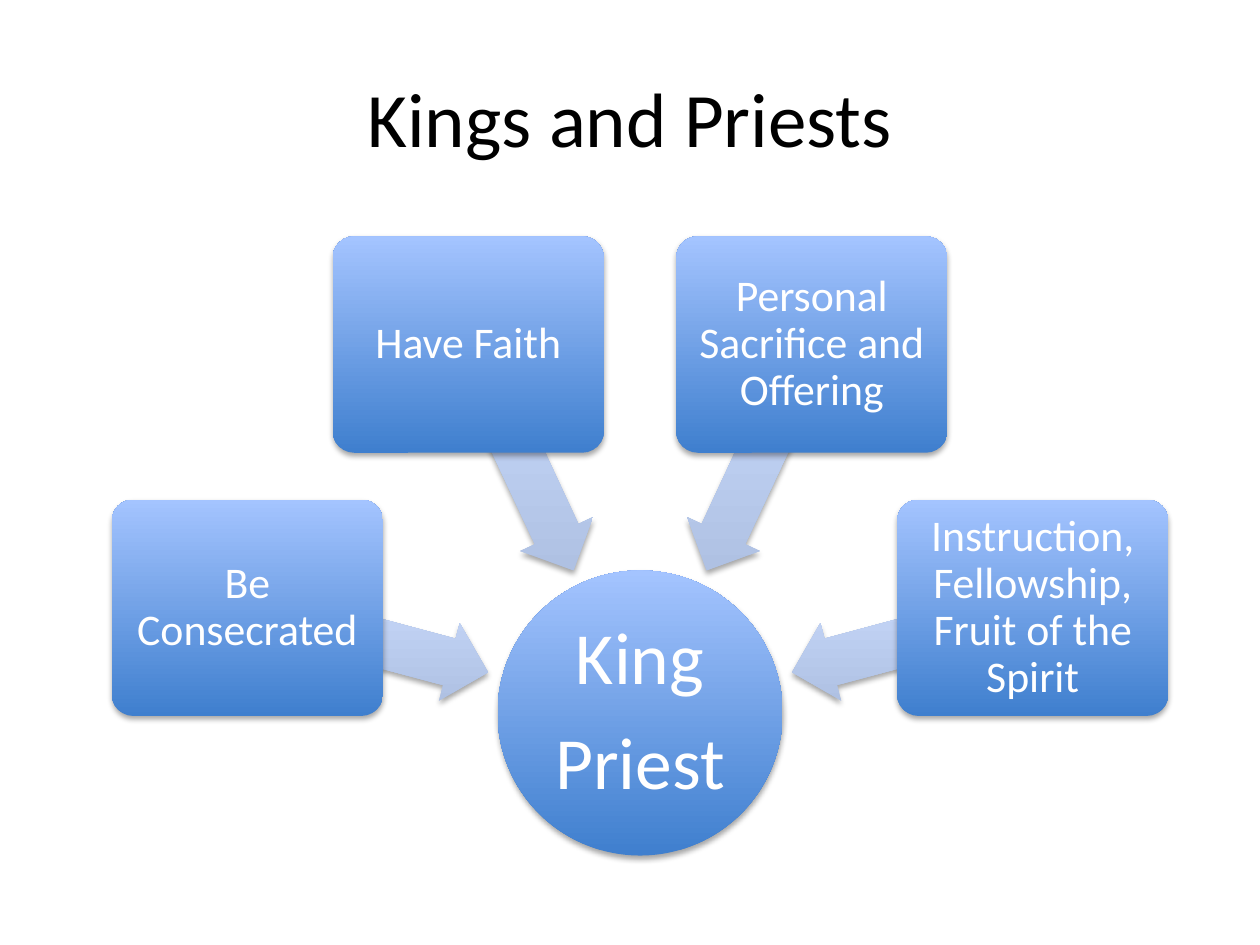
from math import cos, radians, sin

from pptx import Presentation, util as u
from pptx.dml.color import RGBColor
from pptx.enum import shapes, text
from pptx.oxml import parse_xml
from pptx.oxml.ns import nsdecls, qn

BLACK = RGBColor(0x00, 0x00, 0x00)
WHITE = RGBColor(0xFF, 0xFF, 0xFF)
DEEP_BLUE = RGBColor(0x3F, 0x7F, 0xCE)
SKY_BLUE = RGBColor(0xA4, 0xC4, 0xFF)
DEEP_MIST = RGBColor(0xAD, 0xBF, 0xE1)
PALE_MIST = RGBColor(0xCC, 0xDD, 0xFF)
FONT = "Calibri"
SHADOW = (
    f'<a:effectLst {nsdecls("a")}><a:outerShdw blurRad="40000" dist="23000" '
    'dir="5400000" rotWithShape="0"><a:srgbClr val="000000">'
    '<a:alpha val="35000"/></a:srgbClr></a:outerShdw></a:effectLst>'
)
STEPS = [
    "Be Consecrated",
    "Have Faith",
    "Personal Sacrifice and Offering",
    "Instruction, Fellowship, Fruit of the Spirit",
]
FIRST_ANGLE, ANGLE_STEP = 15, 50


def apply(target, values):
    """Set each attribute of the target from a dict of values."""
    for name, value in values.items():
        setattr(target, name, value)


def write(frame, lines, size, color, inset, paragraph_format):
    """Write centred lines into a text frame."""
    sides = ("margin_left", "margin_right", "margin_top", "margin_bottom")
    apply(frame, {side: u.Inches(inset) for side in sides})
    apply(frame, {"word_wrap": True, "vertical_anchor": text.MSO_ANCHOR.MIDDLE})
    frame.text = "\n".join(lines)
    for para in frame.paragraphs:
        apply(para, {"alignment": text.PP_ALIGN.CENTER, **paragraph_format})
        for span in para.runs:
            apply(span.font, {"name": FONT, "size": u.Pt(size)})
            span.font.color.rgb = color


def add_solid(page, kind, center, size, colors):
    """Add a shaded, shadowed shape around a centre given in inches."""
    (x, y), (width, height) = center, size
    edges = (x - width / 2, y - height / 2, width, height)
    solid = page.shapes.add_shape(kind, *map(u.Inches, edges))
    solid.fill.gradient()
    solid.fill.gradient_angle = 90
    for stop, color in zip(solid.fill.gradient_stops, colors):
        stop.color.rgb = color
    solid.line.fill.background()
    properties = solid._element.spPr
    properties.find(qn("a:gradFill")).set("rotWithShape", "0")
    properties.append(parse_xml(SHADOW))
    return solid


def add_title(page, box, words):
    """Place and format the title placeholder in the box."""
    title = page.shapes.title
    apply(title, dict(zip(("left", "top", "width", "height"), map(u.Inches, box))))
    write(title.text_frame, [words], 44, BLACK, 0.1, {})


def add_radial_diagram(page, box, hub_lines, steps):
    """Fan the steps around a hub at the foot of the box, with arrows inward."""
    left, top, width, height = box
    hub_size = 0.27 * width
    hub_x, hub_y = left + width / 2, top + height - hub_size / 2
    card_size = (0.257 * width, 0.205 * width)
    arrow_size = (0.236 * width, 0.076 * width)
    blues, mists = (DEEP_BLUE, SKY_BLUE), (DEEP_MIST, PALE_MIST)

    def around(reach, angle):
        """Return the point at a share of the width from the hub."""
        turn = radians(angle)
        return hub_x - reach * width * cos(turn), hub_y - reach * width * sin(turn)

    hub = add_solid(page, shapes.MSO_SHAPE.OVAL, (hub_x, hub_y), (hub_size, hub_size), blues)
    write(hub.text_frame, hub_lines, 42, WHITE, 0.03,
          {"line_spacing": 0.9, "space_after": u.Pt(15)})
    for index, step in enumerate(steps):
        angle = FIRST_ANGLE + index * ANGLE_STEP
        arrow = add_solid(page, shapes.MSO_SHAPE.LEFT_ARROW, around(0.267, angle), arrow_size, mists)
        arrow.adjustments[0], arrow.adjustments[1] = 0.6, 0.5
        arrow.rotation = 180 + angle
        card = add_solid(page, shapes.MSO_SHAPE.ROUNDED_RECTANGLE, around(0.385, angle), card_size, blues)
        card.adjustments[0] = 0.1
        write(card.text_frame, [step], 25, WHITE, 0.05,
              {"line_spacing": 0.9, "space_after": u.Pt(9)})


def main():
    """Build the deck and save it."""
    deck = Presentation()
    apply(deck, {"slide_width": u.Inches(10), "slide_height": u.Inches(7.5)})
    page = deck.slides.add_slide(deck.slide_layouts[5])
    add_title(page, (0.5, 0.3, 9, 1.25), "Kings and Priests")
    add_radial_diagram(page, (0.89, 1.88, 8.38, 4.91), ["King", "Priest"], STEPS)
    deck.save("out.pptx")


if __name__ == "__main__":
    main()
